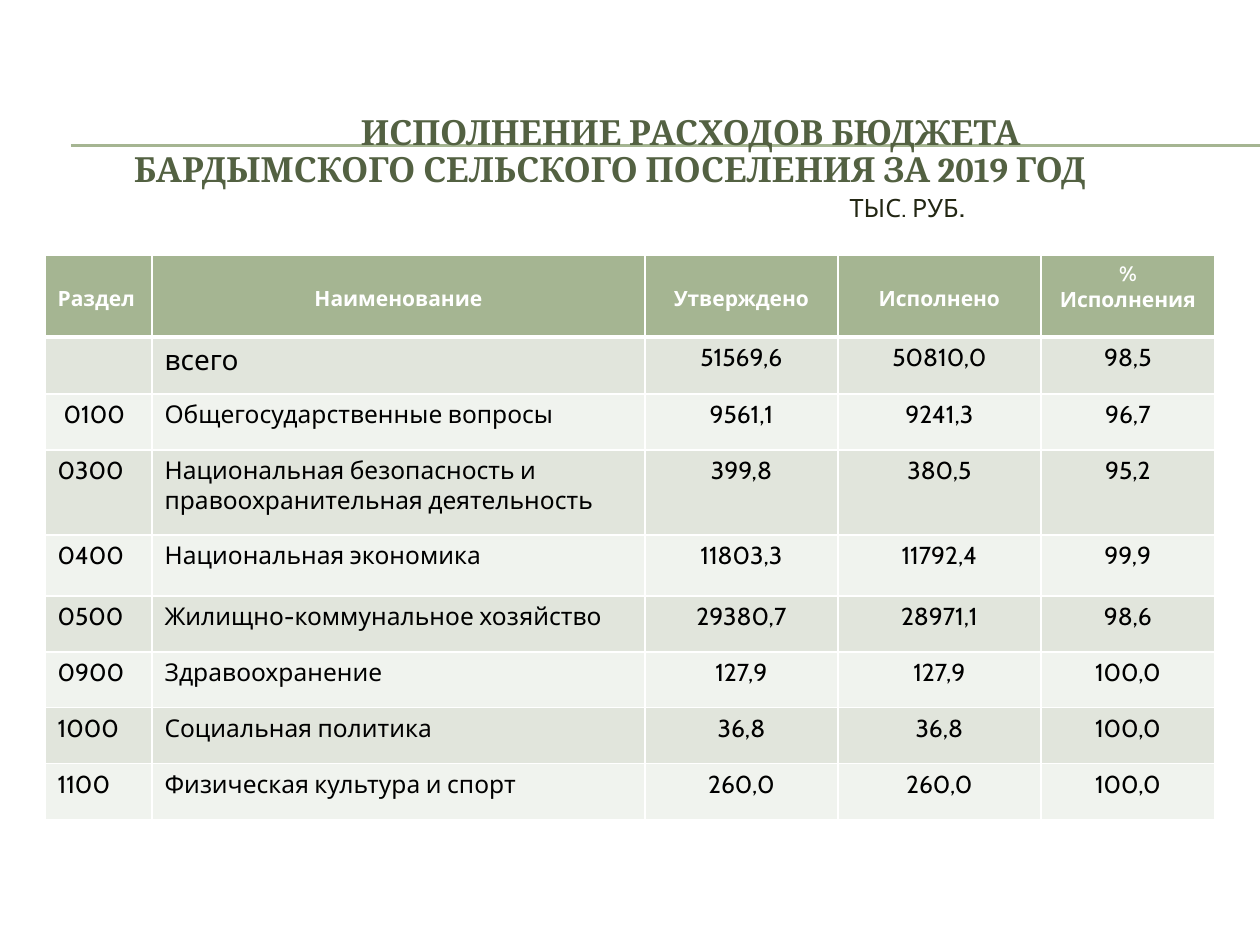
"""Build a slide with the execution of a settlement's budget expenses."""
from lxml import etree
from pptx import Presentation
from pptx.dml.color import RGBColor
from pptx.enum.shapes import MSO_CONNECTOR
from pptx.enum.text import MSO_ANCHOR, PP_ALIGN
from pptx.oxml.ns import qn
from pptx.util import Pt

PX = 914400 // 126
STRAIGHT = MSO_CONNECTOR.STRAIGHT
MIDDLE = MSO_ANCHOR.MIDDLE
LEFT, CENTER = PP_ALIGN.LEFT, PP_ALIGN.CENTER

GREEN = RGBColor(0xA5, 0xB5, 0x92)
TITLE_GREEN = RGBColor(0x53, 0x61, 0x42)
DARK = RGBColor(0x22, 0x26, 0x13)
WHITE = RGBColor(0xFF, 0xFF, 0xFF)
BLACK = RGBColor(0x00, 0x00, 0x00)
BANDS = (RGBColor(0xE1, 0xE5, 0xDC), RGBColor(0xF0, 0xF3, 0xEE))

COLUMN_WIDTHS = (107, 493, 193, 203, 174)
ROW_HEIGHTS = (82, 57, 56, 85, 61, 56, 56, 56, 56)
HEADERS = ("Раздел", "Наименование", "Утверждено", "Исполнено", "% Исполнения")
EXPENSES = (
    ("", "всего", "51569,6", "50810,0", "98,5"),
    ("0100", "Общегосударственные вопросы", "9561,1", "9241,3", "96,7"),
    ("0300", "Национальная безопасность и правоохранительная деятельность",
     "399,8", "380,5", "95,2"),
    ("0400", "Национальная экономика", "11803,3", "11792,4", "99,9"),
    ("0500", "Жилищно-коммунальное хозяйство", "29380,7", "28971,1", "98,6"),
    ("0900", "Здравоохранение", "127,9", "127,9", "100,0"),
    ("1000", "Социальная политика", "36,8", "36,8", "100,0"),
    ("1100", "Физическая культура и спорт", "260,0", "260,0", "100,0"),
)


def add_text(paragraph, text, size=14, font="Cabin", color=BLACK, bold=False,
             align=CENTER, indent=0):
    """Append a formatted run to a paragraph."""
    paragraph.alignment = align
    if indent:
        paragraph._p.get_or_add_pPr().set("marL", str(indent * PX))
    run = paragraph.add_run()
    run.text = text
    run.font.size = Pt(size)
    run.font.name = font
    run.font.bold = bold
    run.font.color.rgb = color


def add_rule(slide, left, right, y):
    """Draw a thin horizontal line without a shadow."""
    rule = slide.shapes.add_connector(
        STRAIGHT, left * PX, y * PX, right * PX, y * PX)
    rule.line.color.rgb = GREEN
    rule.line.width = Pt(0.75)
    etree.SubElement(rule._element.spPr, qn("a:effectLst"))


def add_title(slide):
    """Add the two title lines and the unit below them."""
    box = slide.shapes.add_textbox(44 * PX, 106 * PX, 1131 * PX, 128 * PX)
    frame = box.text_frame
    frame.word_wrap = True
    frame.vertical_anchor = MIDDLE
    first, second, unit = (
        frame.paragraphs[0], frame.add_paragraph(), frame.add_paragraph())
    for paragraph in (first, second, unit):
        paragraph.line_spacing = 0.9
    heading = {"size": 19.8, "font": "Cambria", "color": TITLE_GREEN, "bold": True}
    add_text(first, "ИСПОЛНЕНИЕ РАСХОДОВ БЮДЖЕТА", indent=162, **heading)
    add_text(second, "БАРДЫМСКОГО СЕЛЬСКОГО ПОСЕЛЕНИЯ ЗА 2019 ГОД", **heading)
    add_text(unit, "ТЫС. РУБ", size=14.4, color=DARK, indent=596)
    add_text(unit, ".", size=18, color=DARK, indent=596)


def style_cell(cell, fill, bottom_width=1):
    """Give a cell its white borders and its fill."""
    properties = cell._tc.get_or_add_tcPr()
    for side in "LRTB":
        width = bottom_width if side == "B" else 1
        border = etree.SubElement(
            properties, qn(f"a:ln{side}"), w=str(Pt(width)))
        solid = etree.SubElement(border, qn("a:solidFill"))
        etree.SubElement(solid, qn("a:srgbClr"), val=str(WHITE))
    cell.fill.solid()
    cell.fill.fore_color.rgb = fill


def add_expense_table(slide):
    """Add the table of approved and executed expenses."""
    table = slide.shapes.add_table(
        len(ROW_HEIGHTS), len(COLUMN_WIDTHS), 45 * PX, 255 * PX,
        sum(COLUMN_WIDTHS) * PX, sum(ROW_HEIGHTS) * PX).table
    for column, width in zip(table.columns, COLUMN_WIDTHS):
        column.width = width * PX
    for row, height in zip(table.rows, ROW_HEIGHTS):
        row.height = height * PX

    for index, header in enumerate(HEADERS):
        cell = table.cell(0, index)
        style_cell(cell, GREEN, bottom_width=3)
        if not header.startswith("%"):
            cell.margin_top = 31 * PX
        add_text(cell.text_frame.paragraphs[0], header, size=12, color=WHITE,
                 bold=True, align=CENTER if index else LEFT)

    for row_index, expense in enumerate(EXPENSES, start=1):
        for index, value in enumerate(expense):
            cell = table.cell(row_index, index)
            style_cell(cell, BANDS[(row_index - 1) % 2])
            if value:
                add_text(cell.text_frame.paragraphs[0], value,
                         size=16 if value == "всего" else 14,
                         align=LEFT if index < 2 else CENTER,
                         indent=6 if value == "0100" else 0)


def main():
    """Build and save the presentation."""
    presentation = Presentation()
    presentation.slide_width = 1260 * PX
    presentation.slide_height = 945 * PX
    slide = presentation.slides.add_slide(presentation.slide_layouts[6])
    for y in (145, 146):
        add_rule(slide, 71, 1260, y)
    add_title(slide)
    add_expense_table(slide)
    presentation.save("out.pptx")


if __name__ == "__main__":
    main()
